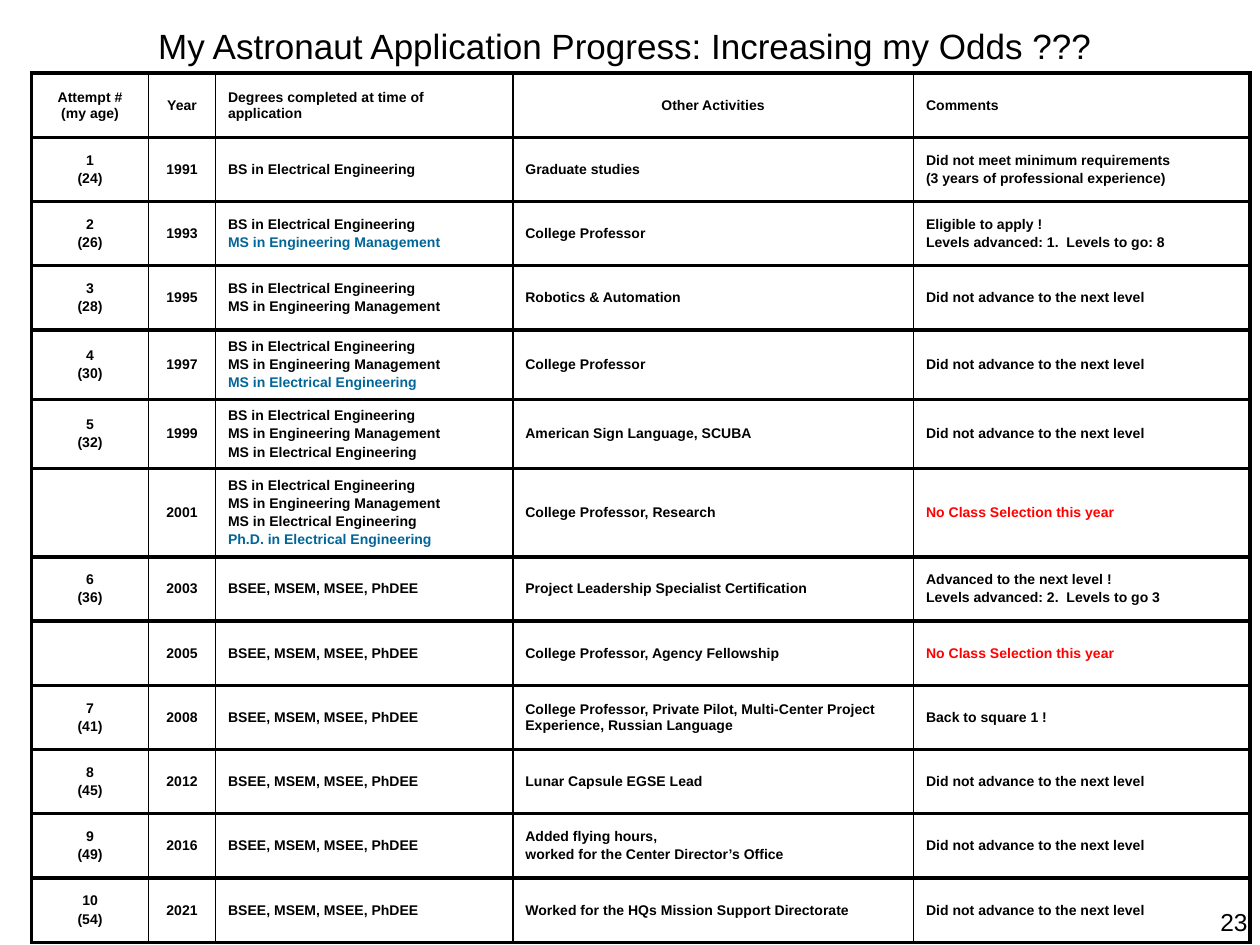
import pptx
import pptx.dml.color
import pptx.enum.text
import pptx.oxml
import pptx.oxml.ns
import pptx.util

Inches, Pt = pptx.util.Inches, pptx.util.Pt
RGBColor = pptx.dml.color.RGBColor
LEFT, CENTER, RIGHT = (pptx.enum.text.PP_ALIGN.LEFT, pptx.enum.text.PP_ALIGN.CENTER,
                       pptx.enum.text.PP_ALIGN.RIGHT)
TOP, MIDDLE = pptx.enum.text.MSO_ANCHOR.TOP, pptx.enum.text.MSO_ANCHOR.MIDDLE

BLACK = RGBColor(0x00, 0x00, 0x00)
BLUE = RGBColor(0x00, 0x66, 0x99)
RED = RGBColor(0xFF, 0x00, 0x00)

# Content: each cell is a list of lines; a (text, colour) pair is a coloured line
TITLE = "My Astronaut Application Progress: Increasing my Odds ???"
PAGE_NUMBER = "23"
BS = "BS in Electrical Engineering"
MEM = "MS in Engineering Management"
MEE = "MS in Electrical Engineering"
PHD = "Ph.D. in Electrical Engineering"
ALL_DEGREES = ["BSEE, MSEM, MSEE, PhDEE"]
PROFESSOR = ["College Professor"]
NOT_ADVANCED = ["Did not advance to the next level"]
NO_CLASS = [("No Class Selection this year", RED)]

HEADER = [["Attempt # (my age)"], ["Year"], ["Degrees completed at time of application"],
          ["Other Activities"], ["Comments"]]
ATTEMPTS = [
    (["1", "(24)"], ["1991"], [BS], ["Graduate studies"],
     ["Did not meet minimum requirements", "(3 years of professional experience)"]),
    (["2", "(26)"], ["1993"], [BS, (MEM, BLUE)], PROFESSOR,
     ["Eligible to apply !", "Levels advanced: 1.  Levels to go: 8"]),
    (["3", "(28)"], ["1995"], [BS, MEM], ["Robotics & Automation"], NOT_ADVANCED),
    (["4", "(30)"], ["1997"], [BS, MEM, (MEE, BLUE)], PROFESSOR, NOT_ADVANCED),
    (["5", "(32)"], ["1999"], [BS, MEM, MEE], ["American Sign Language, SCUBA"], NOT_ADVANCED),
    ([], ["2001"], [BS, MEM, MEE, (PHD, BLUE)], ["College Professor, Research"], NO_CLASS),
    (["6", "(36)"], ["2003"], ALL_DEGREES, ["Project Leadership Specialist Certification"],
     ["Advanced to the next level !", "Levels advanced: 2.  Levels to go 3"]),
    ([], ["2005"], ALL_DEGREES, ["College Professor, Agency Fellowship"], NO_CLASS),
    (["7", "(41)"], ["2008"], ALL_DEGREES,
     ["College Professor, Private Pilot, Multi-Center Project Experience, Russian Language"],
     ["Back to square 1 !"]),
    (["8", "(45)"], ["2012"], ALL_DEGREES, ["Lunar Capsule EGSE Lead"], NOT_ADVANCED),
    (["9", "(49)"], ["2016"], ALL_DEGREES,
     ["Added flying hours,", "worked for the Center Director’s Office"], NOT_ADVANCED),
    (["10", "(54)"], ["2021"], ALL_DEGREES,
     ["Worked for the HQs Mission Support Directorate"], NOT_ADVANCED),
]

COLUMN_WIDTHS = [0.93, 0.53, 2.36, 3.18, 2.67]
ROW_HEIGHT = 0.51
TALL_ROWS = {3: 0.55, 4: 0.7}  # height by number of lines in the degrees cell
THIN, THICK = 1, 2.25


def write_text(frame, lines, size=8, bold=False, align=LEFT, anchor=MIDDLE, space_before=0):
    frame.word_wrap = True
    frame.vertical_anchor = anchor
    for index, line in enumerate(lines):
        text, color = line if isinstance(line, tuple) else (line, BLACK)
        para = frame.paragraphs[0] if index == 0 else frame.add_paragraph()
        para.alignment = align
        para.space_before = Pt(space_before)
        span = para.add_run()
        span.text = text
        span.font.name = "Arial"
        span.font.size = Pt(size)
        span.font.bold = bold
        span.font.color.rgb = color


def add_text_box(page, position, lines, **text_format):
    box = page.shapes.add_textbox(*(Inches(length) for length in position))
    write_text(box.text_frame, lines, **text_format)


def set_borders(cell, left, right):
    properties = cell._tc.get_or_add_tcPr()
    sides = [("lnL", left), ("lnR", right), ("lnT", THICK), ("lnB", THICK)]
    for position, (side, width) in enumerate(sides):
        # Borders must come before the cell fill
        properties.insert(position, pptx.oxml.parse_xml(
            f'<a:{side} {pptx.oxml.ns.nsdecls("a")} w="{Pt(width)}">'
            f'<a:solidFill><a:srgbClr val="{BLACK}"/></a:solidFill></a:{side}>'))


def add_progress_table(page):
    rows = [HEADER, *ATTEMPTS]
    heights = [TALL_ROWS.get(len(row[2]), ROW_HEIGHT) for row in rows]
    last = len(COLUMN_WIDTHS) - 1
    table = page.shapes.add_table(
        len(rows), len(COLUMN_WIDTHS), Inches(0.25), Inches(0.58),
        Inches(sum(COLUMN_WIDTHS)), Inches(sum(heights))).table
    table.first_row = table.horz_banding = False
    for column, width in zip(table.columns, COLUMN_WIDTHS):
        column.width = Inches(width)
    for row_index, (row, height) in enumerate(zip(rows, heights)):
        table.rows[row_index].height = Inches(height)
        for column_index, lines in enumerate(row):
            cell = table.cell(row_index, column_index)
            cell.fill.background()
            cell.vertical_anchor = MIDDLE
            centered = column_index < 2 or (row_index == 0 and column_index == 3)
            write_text(cell.text_frame, lines, bold=True, space_before=1.4,
                       align=CENTER if centered else LEFT)
            set_borders(cell, THICK if column_index == 0 else THIN,
                        THICK if column_index == last else THIN)


def main():
    deck = pptx.Presentation()
    deck.slide_width, deck.slide_height = Inches(10), Inches(7.5)
    page = deck.slides.add_slide(deck.slide_layouts[6])

    # Title, table and page number
    add_text_box(page, (0.75, 0.05, 8.42, 0.62), [TITLE], size=20, align=CENTER)
    add_progress_table(page)
    add_text_box(page, (7.67, 7.15, 2.33, 0.35), [PAGE_NUMBER], size=14, align=RIGHT, anchor=TOP)

    deck.save("out.pptx")


if __name__ == "__main__":
    main()
